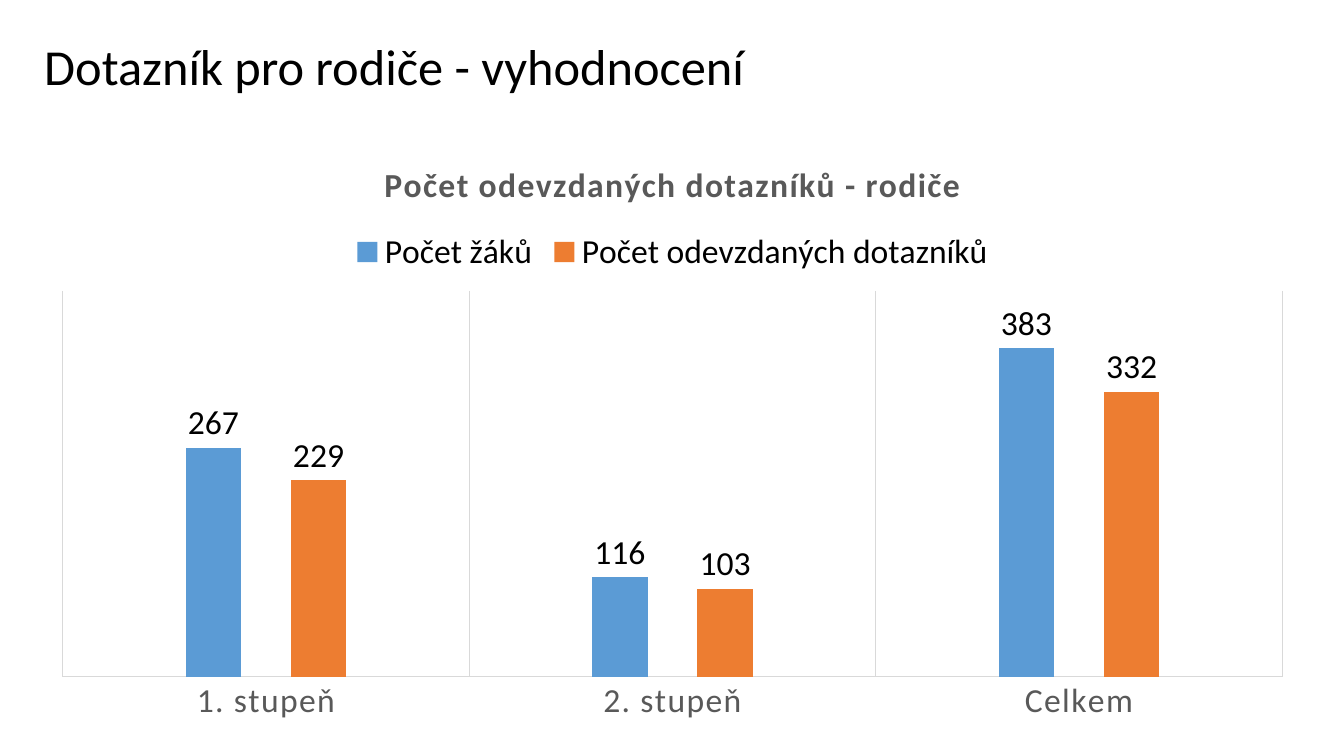
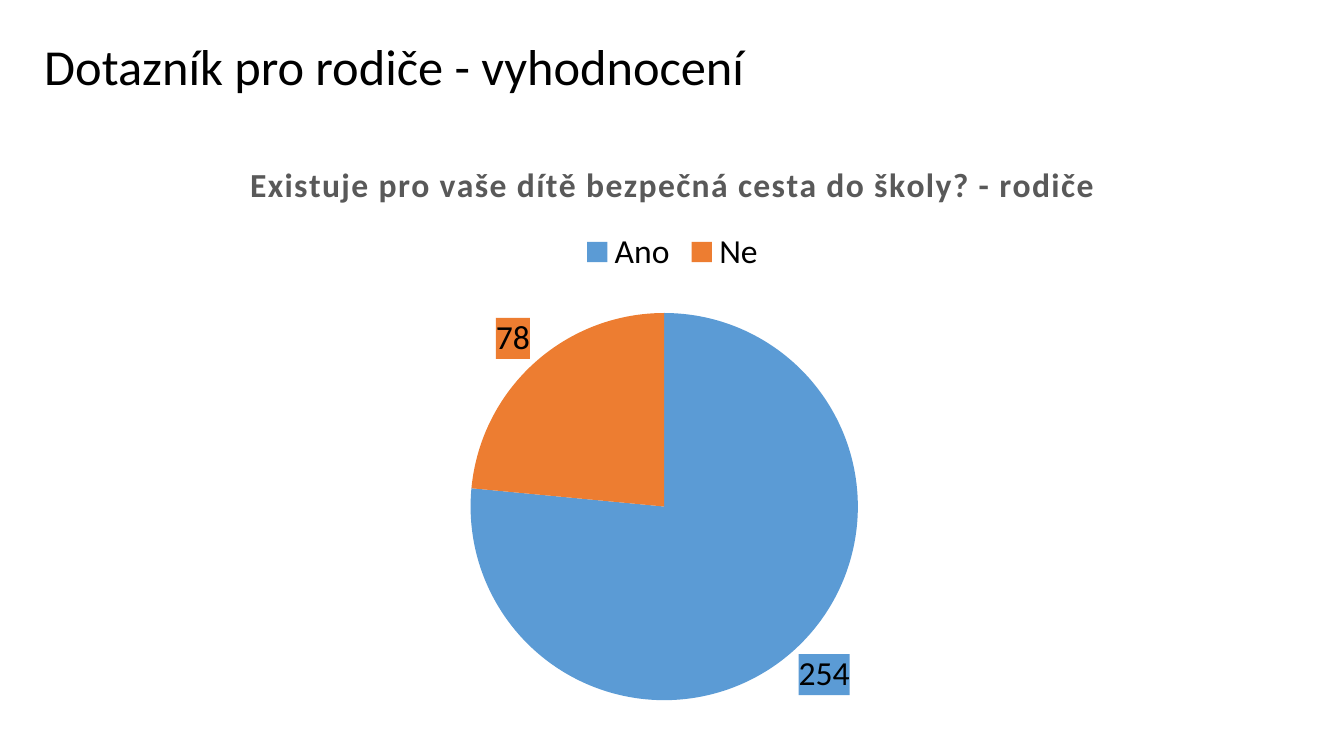
from dataclasses import dataclass

import pptx
import pptx.chart.data
import pptx.dml.color
import pptx.enum.chart
import pptx.enum.text
import pptx.oxml
import pptx.oxml.ns
import pptx.util
from pptx.util import Inches, Pt


@dataclass(frozen=True)
class Theme:
    font: str = "Calibri"
    text: str = "000000"
    muted: str = "595959"
    rule: str = "D9D9D9"
    accents: tuple = ("5B9BD5", "ED7D31")
    heading_size: int = 36
    chart_size: int = 24
    letter_spacing: int = 100


THEME = Theme()
HEADING = "Dotazník pro rodiče - vyhodnocení"

# Plot areas are fractions of the chart: x, y, width, height
RETURNED = {
    "title": "Počet odevzdaných dotazníků - rodiče",
    "kind": pptx.enum.chart.XL_CHART_TYPE.COLUMN_CLUSTERED,
    "categories": ["1. stupeň", "2. stupeň", "Celkem"],
    "series": {
        "Počet žáků": [267, 116, 383],
        "Počet odevzdaných dotazníků": [229, 103, 332],
    },
    "plot_area": (0.02, 0.255, 0.96, 0.648),
}
SAFE_ROUTE = {
    "title": "Existuje pro vaše dítě bezpečná cesta do školy? - rodiče",
    "kind": pptx.enum.chart.XL_CHART_TYPE.PIE,
    "categories": ["Ano", "Ne"],
    "series": {"Počet odpovědí": [254, 78]},
    "plot_area": (0.341, 0.292, 0.305, 0.65),
}


def rgb(color):
    return pptx.dml.color.RGBColor.from_string(color)


def set_font(font, size, color=THEME.text, bold=False):
    font.name = THEME.font
    font.size = Pt(size)
    font.bold = bold
    font.color.rgb = rgb(color)


def fill_solid(fill, color):
    fill.solid()
    fill.fore_color.rgb = rgb(color)


def set_line(line, color):
    line.color.rgb = rgb(color)
    line.width = Pt(0.75)


def space_letters(text_element):
    for props in text_element.iter(pptx.oxml.ns.qn("a:defRPr"), pptx.oxml.ns.qn("a:rPr")):
        props.set("spc", str(THEME.letter_spacing))


def set_plot_area(chart, area):
    """Pin the inner plot area to fractions of the chart."""
    values = "".join(f'<c:{key} val="{value}"/>' for key, value in zip("xywh", area))
    layout = pptx.oxml.parse_xml(
        f'<c:layout {pptx.oxml.ns.nsdecls("c")}><c:manualLayout>'
        '<c:layoutTarget val="inner"/><c:xMode val="edge"/><c:yMode val="edge"/>'
        f"{values}</c:manualLayout></c:layout>")
    plot_area = chart._chartSpace.chart.plotArea
    for old in plot_area.findall(pptx.oxml.ns.qn("c:layout")):
        plot_area.remove(old)
    plot_area.insert(0, layout)


def add_heading(slide):
    box = slide.shapes.add_textbox(Inches(0.34), 0, Inches(12.99), Inches(1.38))
    frame = box.text_frame
    frame.word_wrap = True
    frame.vertical_anchor = pptx.enum.text.MSO_ANCHOR.MIDDLE
    heading = frame.paragraphs[0]
    heading.text = HEADING
    heading.line_spacing = 0.9
    set_font(heading.font, THEME.heading_size)


def add_survey_chart(slide, survey):
    data = pptx.chart.data.CategoryChartData()
    data.categories = survey["categories"]
    for name, values in survey["series"].items():
        data.add_series(name, values)
    chart = slide.shapes.add_chart(
        survey["kind"], Inches(0.37), Inches(1.38), Inches(12.6), Inches(5.91), data).chart
    set_font(chart.font, 10)

    chart.has_title = True
    title = chart.chart_title.text_frame.paragraphs[0]
    title.text = survey["title"]
    set_font(title.font, THEME.chart_size, THEME.muted, bold=True)
    space_letters(title._p)
    chart.chart_title.include_in_layout = False

    chart.has_legend = True
    chart.legend.position = pptx.enum.chart.XL_LEGEND_POSITION.TOP
    chart.legend.include_in_layout = False
    set_font(chart.legend.font, THEME.chart_size)

    for series in chart.plots[0].series:
        labels = series.data_labels
        labels.show_value = True
        labels.position = pptx.enum.chart.XL_LABEL_POSITION.OUTSIDE_END
        set_font(labels.font, THEME.chart_size)
    set_plot_area(chart, survey["plot_area"])
    return chart


def style_columns(chart):
    plot = chart.plots[0]
    plot.vary_by_categories = False
    plot.gap_width = 444
    plot.overlap = -90
    for series, color in zip(plot.series, THEME.accents):
        fill_solid(series.format.fill, color)

    stages = chart.category_axis
    stages.major_tick_mark = pptx.enum.chart.XL_TICK_MARK.NONE
    stages.has_major_gridlines = True
    set_line(stages.major_gridlines.format.line, THEME.rule)
    set_line(stages.format.line, THEME.rule)
    set_font(stages.tick_labels.font, THEME.chart_size, THEME.muted)
    space_letters(stages._element)

    counts = chart.value_axis
    counts.minimum_scale, counts.maximum_scale = 0, 450
    counts.has_major_gridlines = False
    counts.visible = False


def style_pie(chart):
    plot = chart.plots[0]
    plot.vary_by_categories = True
    answers = plot.series[0]
    for index, color in enumerate(THEME.accents):
        point = answers.points[index]
        fill_solid(point.format.fill, color)
        set_font(point.data_label.font, THEME.chart_size)
        point.data_label.position = pptx.enum.chart.XL_LABEL_POSITION.OUTSIDE_END
    for label, color in zip(answers._element.iter(pptx.oxml.ns.qn("c:dLbl")), THEME.accents):
        for old in label.findall(pptx.oxml.ns.qn("c:spPr")):
            label.remove(old)
        label.find(pptx.oxml.ns.qn("c:txPr")).addprevious(pptx.oxml.parse_xml(
            f'<c:spPr {pptx.oxml.ns.nsdecls("c", "a")}><a:solidFill>'
            f'<a:srgbClr val="{color}"/></a:solidFill></c:spPr>'))


def main():
    deck = pptx.Presentation()
    deck.slide_width, deck.slide_height = Inches(13.33), Inches(7.5)
    for survey, style in ((RETURNED, style_columns), (SAFE_ROUTE, style_pie)):
        slide = deck.slides.add_slide(deck.slide_layouts[6])
        add_heading(slide)
        style(add_survey_chart(slide, survey))
    deck.save("out.pptx")


if __name__ == "__main__":
    main()
